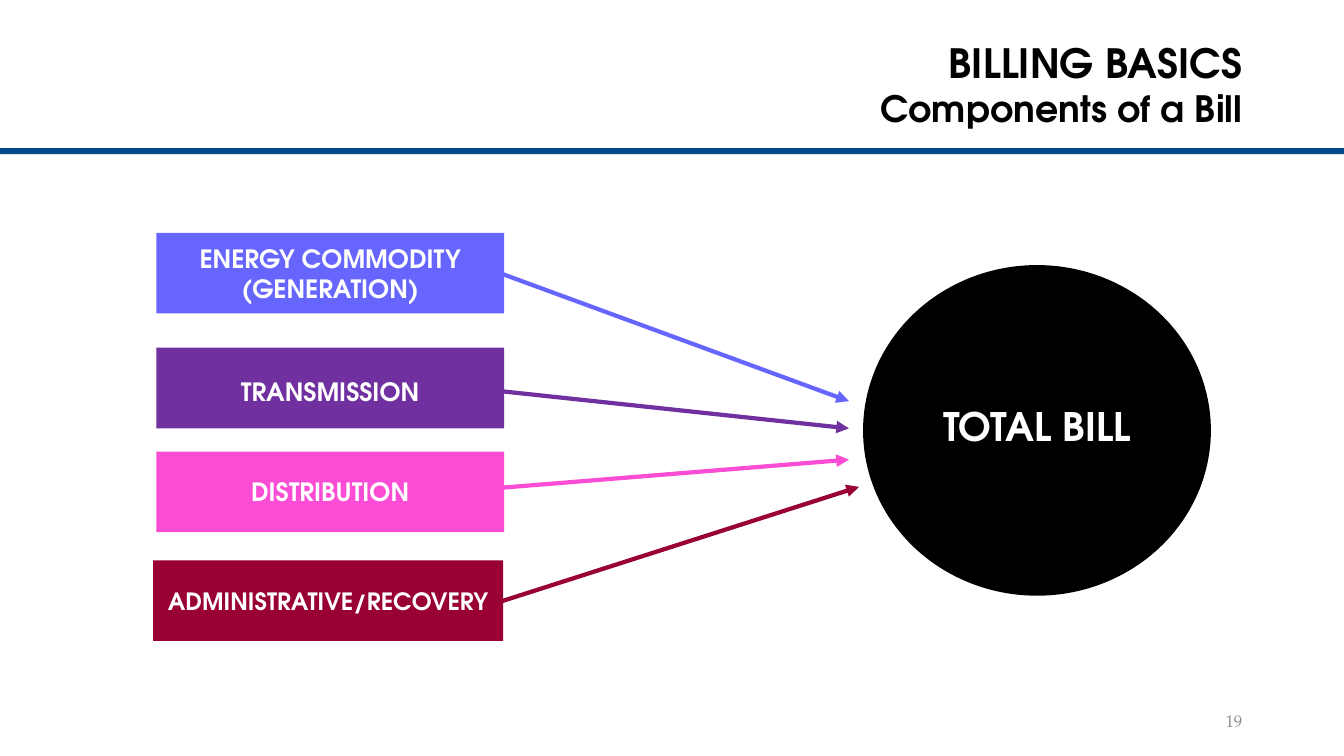
from pptx import Presentation
from pptx.dml.color import RGBColor
from pptx.enum import shapes, text
from pptx.oxml import parse_xml
from pptx.oxml.ns import nsdecls, qn
from pptx.util import Inches, Pt

BLACK = RGBColor(0x00, 0x00, 0x00)
WHITE = RGBColor(0xFF, 0xFF, 0xFF)
GREY = RGBColor(0x8C, 0x8C, 0x8C)
NAVY = RGBColor(0x00, 0x4A, 0x8B)
PERIWINKLE = RGBColor(0x66, 0x66, 0xFF)
PURPLE = RGBColor(0x70, 0x30, 0xA0)
PINK = RGBColor(0xFA, 0x4C, 0xD5)
CRIMSON = RGBColor(0x99, 0x00, 0x33)
HEADING_FONT = "TeX Gyre Adventor"
NUMBER_FONT = "TeX Gyre Pagella"
CENTER, RIGHT = text.PP_ALIGN.CENTER, text.PP_ALIGN.RIGHT


def write(shape, lines, size, color, align, anchor=text.MSO_ANCHOR.MIDDLE,
          font=HEADING_FONT, bold=True, spacing=1.0):
    frame = shape.text_frame
    frame.word_wrap = True
    frame.auto_size = text.MSO_AUTO_SIZE.NONE
    frame.vertical_anchor = anchor
    for index, line in enumerate(lines):
        paragraph = frame.add_paragraph() if index else frame.paragraphs[0]
        paragraph.alignment = align
        paragraph.line_spacing = spacing
        run = paragraph.add_run()
        run.text = line
        run.font.name = font
        run.font.size = Pt(size)
        run.font.bold = bold
        run.font.color.rgb = color


def add_filled(kind, left, top, width, height, color):
    shape = slide.shapes.add_shape(
        kind, Inches(left), Inches(top), Inches(width), Inches(height))
    shape.shadow.inherit = False
    shape.fill.solid()
    shape.fill.fore_color.rgb = color
    shape.line.fill.background()
    return shape


prs = Presentation()
prs.slide_width = Inches(13.33)
prs.slide_height = Inches(7.5)
slide = prs.slides.add_slide(prs.slide_layouts[5])

add_filled(shapes.MSO_SHAPE.RECTANGLE, 0, 1.47, 13.33, 0.06, NAVY)

title = slide.shapes.title
title.left, title.top = Inches(1.89), Inches(0.4)
title.width, title.height = Inches(10.53), Inches(0.49)
write(title, ["BILLING BASICS"], 28.8, BLACK, RIGHT, spacing=0.9)

subtitle = slide.shapes.add_textbox(
    Inches(1.89), Inches(0.89), Inches(10.53), Inches(0.46))
write(subtitle, ["Components of a Bill"], 25.9, BLACK, RIGHT,
      anchor=text.MSO_ANCHOR.TOP, spacing=0.8)

page_number = slide.shapes.add_textbox(
    Inches(9.42), Inches(6.95), Inches(3), Inches(0.4))
write(page_number, ["19"], 12, GREY, RIGHT, font=NUMBER_FONT, bold=False)

components = [
    (["ENERGY COMMODITY", "(GENERATION)"], PERIWINKLE, 18,
     1.55, 2.31, 3.45, 2.71, 8.42, 3.98),
    (["TRANSMISSION"], PURPLE, 18, 1.55, 3.45, 3.45, 3.88, 8.42, 4.25),
    (["DISTRIBUTION"], PINK, 18, 1.55, 4.48, 3.45, 4.84, 8.42, 4.56),
    (["ADMINISTRATIVE/RECOVERY"], CRIMSON, 17,
     1.52, 5.56, 3.47, 5.97, 8.52, 4.83),
]
for label, color, size, left, top, width, start_y, end_x, end_y in components:
    arrow = slide.shapes.add_connector(
        shapes.MSO_CONNECTOR.STRAIGHT,
        Inches(4.96), Inches(start_y), Inches(end_x), Inches(end_y))
    arrow.line.color.rgb = color
    arrow.line.width = Pt(3)
    arrow.line._get_or_add_ln().append(
        parse_xml(f'<a:tailEnd {nsdecls("a")} type="triangle"/>'))
    arrow._element.find(qn("p:spPr")).append(
        parse_xml(f'<a:effectLst {nsdecls("a")}/>'))

    box = add_filled(shapes.MSO_SHAPE.RECTANGLE, left, top, width, 0.8, color)
    write(box, label, size, WHITE, CENTER)
    if label == ["TRANSMISSION"]:
        box.text_frame.margin_top = Inches(0.11)

total = add_filled(shapes.MSO_SHAPE.OVAL, 8.56, 2.63, 3.45, 3.28, BLACK)
total.text_frame.margin_bottom = Inches(0.14)
write(total, ["TOTAL BILL"], 28, WHITE, CENTER)

prs.save("out.pptx")
